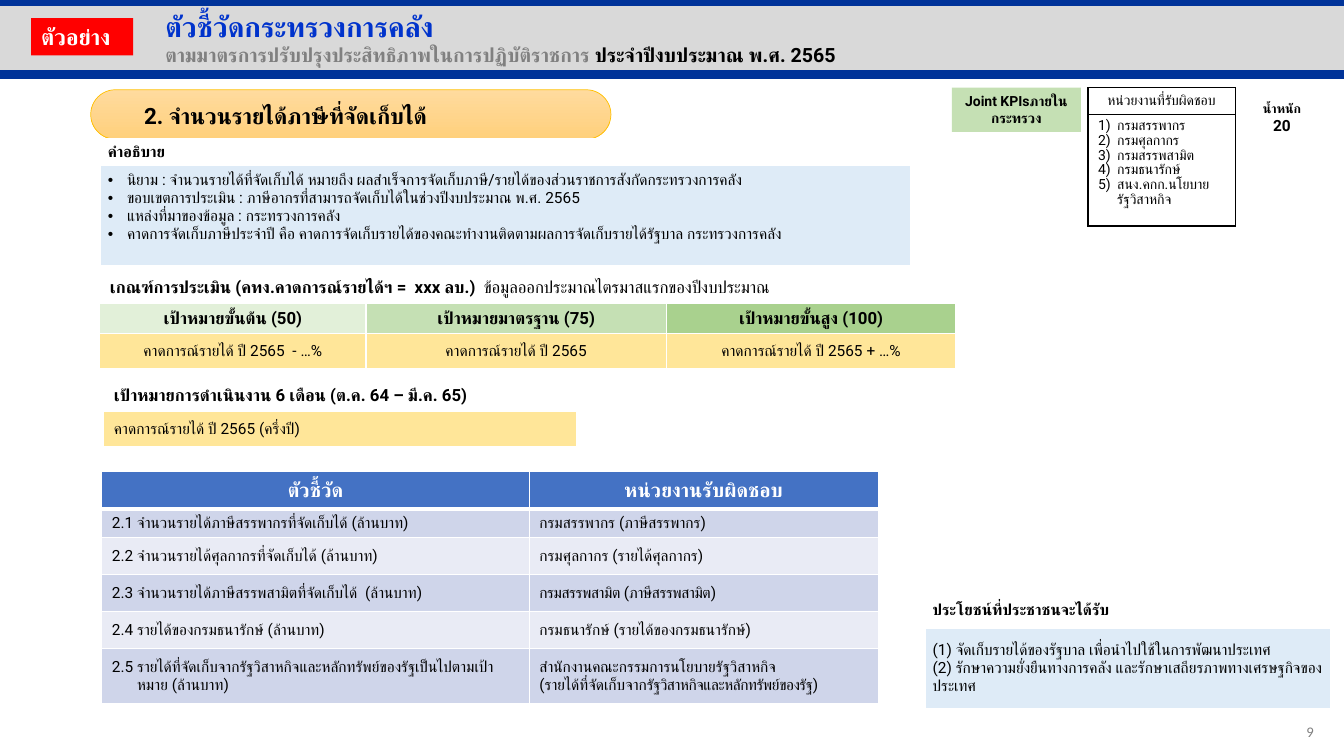
from typing import NamedTuple

import lxml.etree
import pptx
import pptx.dml.color
import pptx.enum.lang
import pptx.enum.shapes
import pptx.enum.text
import pptx.oxml.ns
import pptx.util

COLUMNS, ROWS = 13.33, 7.5  # the slide as a grid of one-inch squares
COLORS = {
    "white": "FFFFFF", "black": "000000", "grey": "808080", "band": "D9D9D9",
    "navy": "003399", "royal": "0033CC", "red": "FF0000", "gold": "FFC000",
    "pill_top": "FFDB9E", "pill_bottom": "FFD07C", "yellow": "FFE699",
    "green_1": "E2F0D9", "green_2": "C5E0B4", "green_3": "A9D18E",
    "sky": "DEEBF7", "blue": "4472C4", "stripe_1": "CFD5EA", "stripe_2": "E9EBF5",
}
SHAPES = pptx.enum.shapes.MSO_SHAPE
LEFT, CENTER, RIGHT = (pptx.enum.text.PP_ALIGN.LEFT, pptx.enum.text.PP_ALIGN.CENTER,
                       pptx.enum.text.PP_ALIGN.RIGHT)
TOP, MIDDLE = pptx.enum.text.MSO_ANCHOR.TOP, pptx.enum.text.MSO_ANCHOR.MIDDLE
qn = pptx.oxml.ns.qn


class Area(NamedTuple):
    left: float
    top: float
    width: float
    height: float


class Span(NamedTuple):
    text: str
    size: float = 11
    bold: bool = False
    color: str = "black"
    font: str = "Roboto"
    tracking: int = 0


class Line(NamedTuple):
    spans: list[Span]
    align: int = LEFT
    indent: float = 0
    bullet: str = ""
    spacing: float = 1.0


class Cell(NamedTuple):
    lines: list[Line]
    fill: str = ""
    anchor: int = MIDDLE
    side: float = 0.1
    across: int = 1


class Grid(NamedTuple):
    left: float
    top: float
    columns: list[float]
    rows: list[float]
    cells: list[list[Cell]]
    border: str = "white"
    header_rule: float = 1


def squares(count: float) -> int:
    return pptx.util.Inches(count)


def rgb(name: str) -> pptx.dml.color.RGBColor:
    return pptx.dml.color.RGBColor.from_string(COLORS[name])


def line(text: str, size: float = 11, bold: bool = False, color: str = "black",
         **layout) -> Line:
    """A line made of one span."""
    return Line([Span(text, size, bold, color)], **layout)


def write_span(para, span: Span) -> None:
    """Add a span; a vertical tab in its text breaks the line."""
    for index, piece in enumerate(span.text.split("\v")):
        if index:
            para.add_line_break()
        run = para.add_run()
        run.text = piece
        run.font.name, run.font.size = span.font, pptx.util.Pt(span.size)
        run.font.bold, run.font.color.rgb = span.bold, rgb(span.color)
        run.font.language_id = pptx.enum.lang.MSO_LANGUAGE_ID.THAI
        properties = run._r.get_or_add_rPr()
        lxml.etree.SubElement(properties, qn("a:cs"), typeface=span.font)
        if span.tracking:
            properties.set("spc", str(span.tracking))


def write(frame, lines: list[Line]) -> None:
    for index, item in enumerate(lines):
        para = frame.add_paragraph() if index else frame.paragraphs[0]
        para.alignment, para.line_spacing = item.align, item.spacing
        for span in item.spans:
            write_span(para, span)
        properties = para._p.get_or_add_pPr()
        if item.indent:
            properties.set("marL", str(squares(item.indent)))
            properties.set("indent", str(-squares(item.indent)))
        if item.bullet:
            lxml.etree.SubElement(properties, qn("a:buFont"), typeface="Arial")
            if item.bullet == "1)":
                lxml.etree.SubElement(properties, qn("a:buAutoNum"), type="arabicParenR")
            else:
                lxml.etree.SubElement(properties, qn("a:buChar"), char=item.bullet)


def draw_shape(page, area: Area, fill: str, lines: list[Line] = (), kind=SHAPES.RECTANGLE,
               wrap: bool = True):
    shape = page.shapes.add_shape(kind, *map(squares, area))
    shape.shadow.inherit = False
    shape.fill.solid()
    shape.fill.fore_color.rgb = rgb(fill)
    shape.line.fill.background()
    shape.text_frame.word_wrap = wrap
    shape.text_frame.vertical_anchor = TOP
    write(shape.text_frame, lines)
    return shape


def draw_text(page, area: Area, lines: list[Line], anchor: int = TOP) -> None:
    box = page.shapes.add_textbox(*map(squares, area))
    box.text_frame.word_wrap = True
    box.text_frame.vertical_anchor = anchor
    write(box.text_frame, lines)


def draw_rule(page, top: float) -> None:
    rule = page.shapes.add_connector(pptx.enum.shapes.MSO_CONNECTOR.STRAIGHT, 0,
                                     squares(top), squares(COLUMNS), squares(top))
    rule.line.color.rgb, rule.line.width = rgb("navy"), pptx.util.Pt(6)
    lxml.etree.SubElement(rule._element.spPr, qn("a:effectLst"))


def draw_borders(cell, row: int, grid: Grid) -> None:
    properties = cell._tc.get_or_add_tcPr()
    for index, side in enumerate(("lnL", "lnR", "lnT", "lnB")):
        under_header = (row, side) in ((0, "lnB"), (1, "lnT"))
        width = pptx.util.Pt(grid.header_rule if under_header else 1)
        edge = lxml.etree.Element(qn(f"a:{side}"), w=str(width))
        if grid.border:
            fill = lxml.etree.SubElement(edge, qn("a:solidFill"))
            lxml.etree.SubElement(fill, qn("a:srgbClr"), val=COLORS[grid.border])
        else:
            lxml.etree.SubElement(edge, qn("a:noFill"))
        properties.insert(index, edge)


def draw_grid(page, grid: Grid) -> None:
    area = Area(grid.left, grid.top, sum(grid.columns), sum(grid.rows))
    table = page.shapes.add_table(len(grid.rows), len(grid.columns),
                                  *map(squares, area)).table
    for column, width in zip(table.columns, grid.columns):
        column.width = squares(width)
    for row, height in zip(table.rows, grid.rows):
        row.height = squares(height)
    for row, cells in enumerate(grid.cells):
        for column, content in enumerate(cells):
            cell = table.cell(row, column)
            if content.across > 1:
                cell.merge(table.cell(row, column + content.across - 1))
            if content.fill:
                cell.fill.solid()
                cell.fill.fore_color.rgb = rgb(content.fill)
            else:
                cell.fill.background()
            cell.margin_left = cell.margin_right = squares(content.side)
            cell.vertical_anchor = content.anchor
            write(cell.text_frame, content.lines)
            draw_borders(cell, row, grid)


DEFINITIONS = [
    "นิยาม : จำนวนรายได้ที่จัดเก็บได้ หมายถึง ผลสำเร็จการจัดเก็บภาษี/รายได้ของส่วนราชการสังกัดกระทรวงการคลัง",
    "ขอบเขตการประเมิน : ภาษีอากรที่สามารถจัดเก็บได้ในช่วงปีงบประมาณ พ.ศ. 2565",
    "แหล่งที่มาของข้อมูล : กระทรวงการคลัง",
    "คาดการจัดเก็บภาษีประจำปี คือ คาดการจัดเก็บรายได้ของคณะทำงานติดตามผลการจัดเก็บรายได้รัฐบาล กระทรวงการคลัง",
]
AGENCIES = ["กรมสรรพากร", "กรมศุลกากร", "กรมสรรพสามิต", "กรมธนารักษ์", "สนง.คกก.นโยบายรัฐวิสาหกิจ"]
TARGETS = [
    ("เป้าหมายขั้นต้น (50)", "green_1", "คาดการณ์รายได้ ปี 2565  - …%"),
    ("เป้าหมายมาตรฐาน (75)", "green_2", "คาดการณ์รายได้ ปี 2565"),
    ("เป้าหมายขั้นสูง (100)", "green_3", "คาดการณ์รายได้ ปี 2565 + …%"),
]
INDICATORS = [
    ("2.1 จำนวนรายได้ภาษีสรรพากรที่จัดเก็บได้ (ล้านบาท)", [Span("กรมสรรพากร (ภาษีสรรพากร)")]),
    ("2.2 จำนวนรายได้ศุลกากรที่จัดเก็บได้ (ล้านบาท)", [Span("กรมศุลกากร (รายได้ศุลกากร)")]),
    ("2.3 จำนวนรายได้ภาษีสรรพสามิตที่จัดเก็บได้  (ล้านบาท)",
     [Span("กรมสรรพสามิต (ภาษีสรรพสามิต)", tracking=-30)]),
    ("2.4 รายได้ของกรมธนารักษ์ (ล้านบาท)", [Span("กรมธนารักษ์ (รายได้ของกรมธนารักษ์)")]),
    ("2.5 รายได้ที่จัดเก็บจากรัฐวิสาหกิจและหลักทรัพย์ของรัฐเป็นไปตามเป้าหมาย (ล้านบาท)",
     [Span("สำนักงานคณะกรรมการนโยบายรัฐวิสาหกิจ \v(รายได้ที่จัดเก็บจาก"),
      Span("รัฐวิสาหกิจและหลักทรัพย์ของรัฐ)", tracking=-30)]),
]
BENEFITS = ["(1) จัดเก็บรายได้ของรัฐบาล เพื่อนำไปใช้ในการพัฒนาประเทศ",
            "(2) รักษาความยั่งยืนทางการคลัง และรักษาเสถียรภาพทางเศรษฐกิจของประเทศ"]

GRIDS = [
    Grid(1.01, 4.68, [4.24, 3.46], [0.37, 0.26, 0.37, 0.37, 0.37, 0.54],
         [[Cell([line(text, 14, True, "white", align=CENTER)], "blue")
           for text in ("ตัวชี้วัด", "หน่วยงานรับผิดชอบ")]]
         + [[Cell([line(name, indent=0.25)], fill), Cell([Line(agency)], fill)]
            for (name, agency), fill in zip(INDICATORS, ["stripe_1", "stripe_2"] * 3)],
         header_rule=3),
    Grid(0.99, 2.71, [2.64, 2.98, 2.87], [0.3, 0.3, 0.35],
         [[Cell([Line([Span("เกณฑ์การประเมิน (คทง.คาดการณ์รายได้ฯ =  xxx ลบ.)  ", 12, True),
                       Span("ข้อมูลออกประมาณไตรมาสแรกของปีงบประมาณ", 12)])],
                "white", TOP, across=3)],
          [Cell([line(name, 12, True, align=CENTER)], fill, side=0.07)
           for name, fill, _ in TARGETS],
          [Cell([line(value, align=CENTER)], "yellow") for *_, value in TARGETS]]),
    Grid(1.03, 3.78, [4.69], [0.3, 0.35],
         [[Cell([line("เป้าหมายการดำเนินงาน 6 เดือน (ต.ค. 64 – มี.ค. 65)", 12, True)], "white", TOP)],
          [Cell([line("คาดการณ์รายได้ ปี 2565 (ครึ่งปี)")], "yellow")]]),
    Grid(1, 1.37, [8.03], [0.27, 0.98],
         [[Cell([line("คำอธิบาย", bold=True)], "white", TOP, 0.07)],
          [Cell([line(text, indent=0.19, bullet="•") for text in DEFINITIONS], "sky", TOP, 0.07)]],
         border=""),
    Grid(9.18, 5.88, [4.02], [0.34, 0.81],
         [[Cell([line("ประโยชน์ที่ประชาชนจะได้รับ", bold=True)], "white", side=0.07)],
          [Cell([line(text) for text in BENEFITS], "sky", side=0.07)]], header_rule=3),
    Grid(10.79, 0.87, [1.46], [0.26, 1.11],
         [[Cell([line("หน่วยงานที่รับผิดชอบ", 10, align=CENTER)], anchor=TOP)],
          [Cell([line(text, 10, indent=0.19, bullet="1)", spacing=0.9) for text in AGENCIES],
                anchor=TOP)]], border="black"),
]


def draw_title(page) -> None:
    title = page.shapes.title
    title.left, title.top, title.width, title.height = map(squares, Area(1.54, 0.04, 8.43, 0.67))
    title.text_frame.vertical_anchor = TOP
    title.text_frame.auto_size = pptx.enum.text.MSO_AUTO_SIZE.NONE
    write(title.text_frame, [
        line("ตัวชี้วัดกระทรวงการคลัง", 20, True, "royal"),
        Line([Span("ตามมาตรการปรับปรุงประสิทธิภาพในการปฏิบัติราชการ ", 14, True, "grey"),
              Span("ประจำปีงบประมาณ พ.ศ. 2565", 14, True)])])
    page.shapes.element.append(title.element)  # in front of the header band


def draw_pill(page) -> None:
    pill = draw_shape(page, Area(0.9, 0.89, 5.16, 0.49), "gold", kind=SHAPES.ROUNDED_RECTANGLE)
    pill.adjustments[0] = 0.5
    pill.fill.gradient()
    pill.fill.gradient_angle = 270
    for stop, color in zip(pill.fill.gradient_stops, ("pill_top", "pill_bottom")):
        stop.color.rgb = rgb(color)
    pill.line.color.rgb, pill.line.width = rgb("gold"), pptx.util.Pt(0.5)


def main() -> None:
    deck = pptx.Presentation()
    deck.slide_width, deck.slide_height = squares(COLUMNS), squares(ROWS)
    page = deck.slides.add_slide(deck.slide_layouts.get_by_name("Title Only"))
    draw_shape(page, Area(0, 0.05, COLUMNS, 0.68), "band")
    for top in (0.74, 0.02):
        draw_rule(page, top)
    draw_pill(page)
    draw_title(page)
    for grid in GRIDS:
        draw_grid(page, grid)
    draw_text(page, Area(1.33, 0.96, 3.61, 0.37), [line("2. จำนวนรายได้ภาษีที่จัดเก็บได้", 16, True)])
    draw_shape(page, Area(0.31, 0.18, 1.01, 0.37), "red",
               [line("ตัวอย่าง", 16, True, "white")], wrap=False)
    draw_text(page, Area(12.11, 0.95, 1.21, 0.44),
              [line("น้ำหนัก", 9, True, align=CENTER), line("20", 11, True, align=CENTER)])
    draw_shape(page, Area(9.44, 0.87, 1.28, 0.44), "green_2",
               [line("Joint KPIsภายในกระทรวง", 10, True, align=CENTER)])
    draw_text(page, Area(10.13, 7.06, 3, 0.4),
              [Line([Span("9", 10.5, color="grey", font="Calibri")], RIGHT)], MIDDLE)
    deck.save("out.pptx")


if __name__ == "__main__":
    main()
